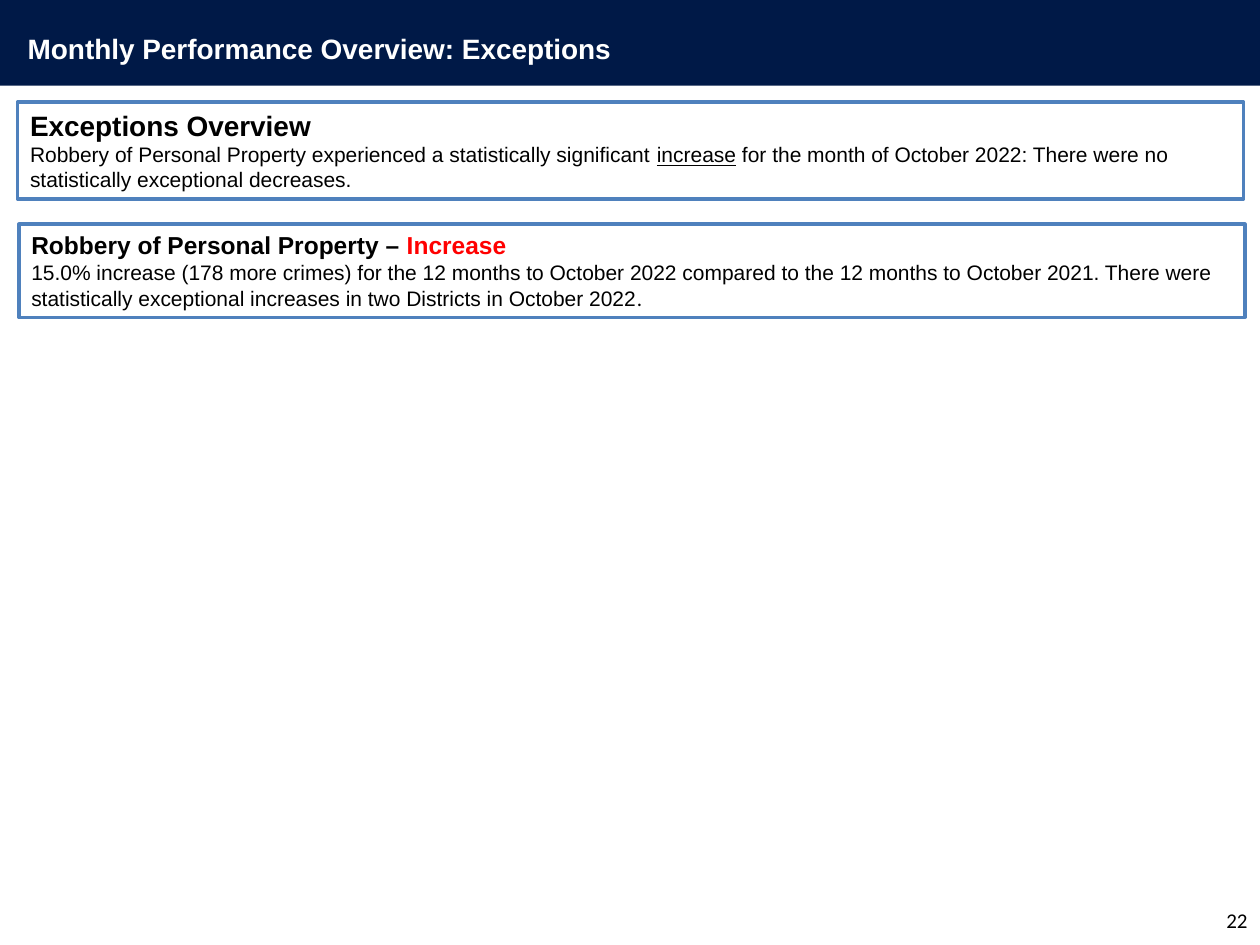
from dataclasses import dataclass

from pptx import Presentation
from pptx.dml.color import RGBColor
from pptx.enum.shapes import MSO_SHAPE as Preset
from pptx.enum.text import MSO_ANCHOR as Anchor, MSO_AUTO_SIZE as AutoSize, PP_ALIGN as Align
from pptx.shapes.autoshape import Shape
from pptx.slide import Slide
from pptx.text.text import TextFrame
from pptx.util import Inches, Pt

COLUMNS, ROWS = 100, 75
SLIDE_WIDTH, SLIDE_HEIGHT = Inches(10), Inches(7.5)


@dataclass(frozen=True)
class Theme:
    navy: RGBColor = RGBColor(0x00, 0x19, 0x47)
    border: RGBColor = RGBColor(0x4F, 0x81, 0xBD)
    white: RGBColor = RGBColor(0xFF, 0xFF, 0xFF)
    black: RGBColor = RGBColor(0x00, 0x00, 0x00)
    alert: RGBColor = RGBColor(0xFF, 0x00, 0x00)
    font: str = "Arial"
    number_font: str = "Calibri"
    title_size: int = 16
    heading_size: int = 14
    body_size: int = 12
    border_width: int = 2


THEME = Theme()


@dataclass(frozen=True)
class Area:
    column: float
    row: float
    columns: float
    rows: float

    def place(self) -> tuple[int, int, int, int]:
        cell_width, cell_height = SLIDE_WIDTH / COLUMNS, SLIDE_HEIGHT / ROWS
        return (round(self.column * cell_width), round(self.row * cell_height),
                round(self.columns * cell_width), round(self.rows * cell_height))


@dataclass(frozen=True)
class Span:
    text: str
    color: RGBColor | None = None
    underline: bool | None = None
    font: str | None = None


@dataclass(frozen=True)
class Panel:
    area: Area
    heading_size: int
    heading: tuple[Span, ...]
    body: tuple[Span, ...]


BANNER = Area(0, -0.7, 100, 7.5)
TITLE = Area(1.2, 2, 56.7, 3.7)
PAGE_NUMBER = Area(76.7, 71, 23.3, 4)

PANELS = (
    Panel(
        Area(1.4, 8.1, 97.3, 7.7),
        THEME.title_size,
        (Span("Exceptions Overview"),),
        (
            Span("Robbery of Personal Property experienced a statistically significant "),
            Span("increase", underline=True),
            Span(" for the month of October 2022: There were no statistically "
                 "exceptional decreases."),
        ),
    ),
    Panel(
        Area(1.5, 17.8, 97.3, 7.4),
        THEME.heading_size,
        (Span("Robbery of Personal Property – "), Span("Increase", color=THEME.alert)),
        (
            Span("15.0% increase (178 more crimes) for the 12 months to October 2022 "
                 "compared to the 12 months to October 2021. There were statistically "
                 "exceptional increases in two Districts in October 2022"),
            Span(".", font=THEME.number_font),
        ),
    ),
)


def write_paragraph(frame: TextFrame, index: int, spans: tuple[Span, ...], size: int,
                    bold: bool = False, color: RGBColor = THEME.black,
                    font: str = THEME.font, align: Align = Align.LEFT) -> None:
    para = frame.paragraphs[0] if index == 0 else frame.add_paragraph()
    para.alignment = align
    para.font.name = font
    para.font.size = Pt(size)
    para.font.bold = bold
    para.font.color.rgb = color
    for span in spans:
        run = para.add_run()
        run.text = span.text
        if span.color is not None:
            run.font.color.rgb = span.color
        if span.underline is not None:
            run.font.underline = span.underline
        if span.font is not None:
            run.font.name = span.font


def add_rectangle(page: Slide, area: Area, fill: RGBColor) -> Shape:
    box = page.shapes.add_shape(Preset.RECTANGLE, *area.place())
    box.shadow.inherit = False
    box.fill.solid()
    box.fill.fore_color.rgb = fill
    box.line.fill.background()
    return box


def add_header(page: Slide) -> None:
    title = page.shapes.title
    title.left, title.top, title.width, title.height = TITLE.place()
    frame = title.text_frame
    frame.auto_size = AutoSize.NONE
    frame.vertical_anchor = Anchor.TOP
    write_paragraph(frame, 0, (Span("Monthly Performance Overview: Exceptions"),),
                    THEME.title_size, bold=True, color=THEME.white)
    banner = add_rectangle(page, BANNER, THEME.navy)
    title.element.addprevious(banner.element)


def add_page_number(page: Slide, number: int) -> None:
    frame = page.shapes.add_textbox(*PAGE_NUMBER.place()).text_frame
    frame.word_wrap = True
    frame.vertical_anchor = Anchor.MIDDLE
    write_paragraph(frame, 0, (Span(str(number)),), THEME.body_size,
                    font=THEME.number_font, align=Align.RIGHT)


def add_panel(page: Slide, panel: Panel) -> None:
    box = add_rectangle(page, panel.area, THEME.white)
    box.line.color.rgb = THEME.border
    box.line.width = Pt(THEME.border_width)
    frame = box.text_frame
    frame.word_wrap = True
    frame.vertical_anchor = Anchor.TOP
    write_paragraph(frame, 0, panel.heading, panel.heading_size, bold=True)
    write_paragraph(frame, 1, panel.body, THEME.body_size)


def main() -> None:
    deck = Presentation()
    deck.slide_width, deck.slide_height = SLIDE_WIDTH, SLIDE_HEIGHT
    page = deck.slides.add_slide(deck.slide_layouts.get_by_name("Title Only"))
    add_header(page)
    add_page_number(page, 22)
    for panel in PANELS:
        add_panel(page, panel)
    deck.save("out.pptx")


if __name__ == "__main__":
    main()
